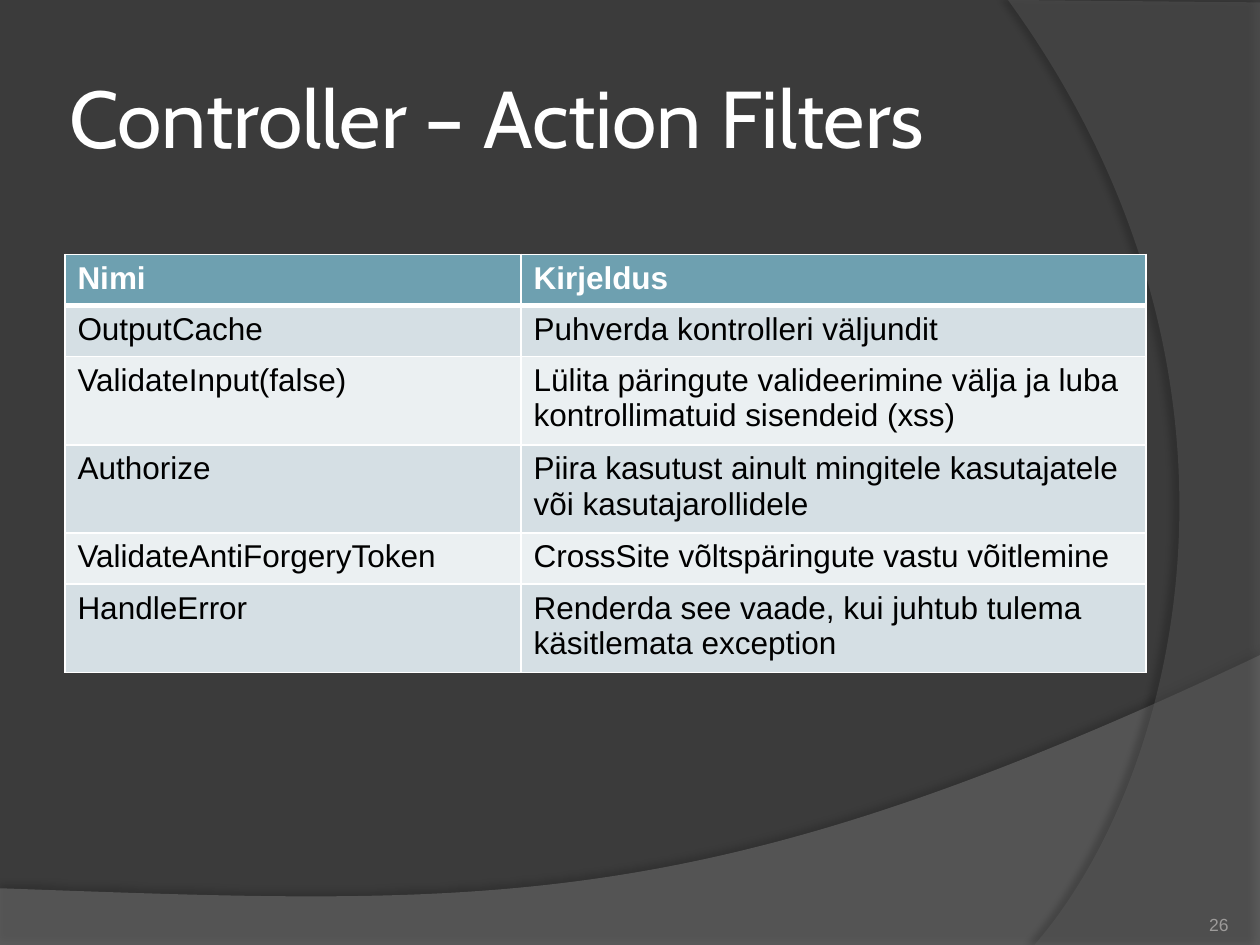
"""Build the slide that lists controller action filters in a table."""
from lxml import etree
from pptx import Presentation
from pptx.dml.color import RGBColor
from pptx.enum.text import MSO_ANCHOR, PP_ALIGN
from pptx.oxml import parse_xml
from pptx.oxml.ns import qn
from pptx.util import Pt

LEFT, RIGHT = PP_ALIGN.LEFT, PP_ALIGN.RIGHT
MIDDLE, BOTTOM = MSO_ANCHOR.MIDDLE, MSO_ANCHOR.BOTTOM
DRAWING = 'xmlns:a="http://schemas.openxmlformats.org/drawingml/2006/main"'

COLORS = {
    "background": "3B3B3B",
    "lower wave": "7F7F7F",
    "right arc": "5E5E5E",
    "shadow": "000000",
    "white": "FFFFFF",
    "header": "6EA0B0",
    "odd row": "D5DFE4",
    "even row": "EBF0F2",
    "cell text": "000000",
    "page number": "9D9B9A",
}


def write_text(frame, text, align, color, **font_values):
    """Put one formatted span into a text frame."""
    para = frame.paragraphs[0]
    para.alignment = align
    span = para.add_run()
    span.text = text
    span.font.color.rgb = RGBColor.from_string(COLORS[color])
    for name, value in font_values.items():
        setattr(span.font, name, value)


deck = Presentation()
deck.slide_width, deck.slide_height = Pt(720), Pt(540)
page = deck.slides.add_slide(deck.slide_layouts[5])
page.background.fill.solid()
page.background.fill.fore_color.rgb = RGBColor.from_string(COLORS["background"])

bands = [
    ("lower wave", [(0, 507.6), (0, 540), (720, 540), (720, 374.4)],
     [(402.5, 524.9), (281.5, 517.7), (0, 507.6)], 45, 35, 3.5, 270),
    ("right arc", [(720, 1.4), (720, 540), (591.1, 540)],
     [(673.2, 445.7), (733, 216), (576, 0)], 40, 45, 4, 180),
]
for name, corners, curve, opacity, shadow_opacity, distance, angle in bands:
    points = [(Pt(x), Pt(y)) for x, y in corners + curve[-1:]]
    builder = page.shapes.build_freeform(*points[0])
    builder.add_line_segments(points[1:], close=True)
    band = builder.convert_to_shape()
    last_line = list(band.element.iter(qn("a:lnTo")))[-1]
    bend = etree.Element(qn("a:cubicBezTo"))
    for x, y in curve:
        etree.SubElement(bend, qn("a:pt"), x=str(Pt(x) - band.left), y=str(Pt(y) - band.top))
    last_line.getparent().replace(last_line, bend)
    band.line.fill.background()
    band.fill.solid()
    band.fill.fore_color.rgb = RGBColor.from_string(COLORS[name])
    fill_color = band.element.spPr.find(qn("a:solidFill"))[0]
    etree.SubElement(fill_color, qn("a:alpha"), val=str(opacity * 1000))
    band.element.spPr.append(parse_xml(
        f'<a:effectLst {DRAWING}><a:outerShdw blurRad="{Pt(4)}" '
        f'dist="{Pt(distance)}" dir="{angle * 60000}" algn="ctr" rotWithShape="0">'
        f'<a:srgbClr val="{COLORS["shadow"]}"><a:alpha val="{shadow_opacity * 1000}"/>'
        '</a:srgbClr></a:outerShdw></a:effectLst>'
    ))

title = page.shapes.title
page.shapes.element.append(title.element)
for name, value in zip(("left", "top", "width", "height"), (36, 21.6, 588.2, 90)):
    setattr(title, name, Pt(value))
number_box = page.shapes.add_textbox(Pt(642.2), Pt(505.4), Pt(59.8), Pt(28.8))
for box, anchor, margin in [(title, MIDDLE, 3.6), (number_box, BOTTOM, 0)]:
    frame = box.text_frame
    frame.word_wrap = True
    frame.vertical_anchor = anchor
    for side in ("left", "top", "right", "bottom"):
        setattr(frame, f"margin_{side}", Pt(margin))
write_text(title.text_frame, "Controller – Action Filters", LEFT, "white",
           name="Cabin", size=Pt(46))
write_text(number_box.text_frame, "26", RIGHT, "page number", name="Arial", size=Pt(10))

one_line, two_lines = 29.2, 47.4
rows = [
    (one_line, "Nimi", "Kirjeldus"),
    (one_line, "OutputCache", "Puhverda kontrolleri väljundit"),
    (two_lines, "ValidateInput(false)",
     "Lülita päringute valideerimine välja ja luba kontrollimatuid sisendeid (xss)"),
    (two_lines, "Authorize",
     "Piira kasutust ainult mingitele kasutajatele või kasutajarollidele"),
    (one_line, "ValidateAntiForgeryToken", "CrossSite võltspäringute vastu võitlemine"),
    (two_lines, "HandleError",
     "Renderda see vaade, kui juhtub tulema käsitlemata exception"),
]
column_widths = (260.6, 357.1)
table = page.shapes.add_table(
    len(rows), len(column_widths), Pt(37.1), Pt(145.4),
    Pt(sum(column_widths)), Pt(sum(row[0] for row in rows)),
).table
for column, width in zip(table.columns, column_widths):
    column.width = Pt(width)
for row_index, (height, *texts) in enumerate(rows):
    table.rows[row_index].height = Pt(height)
    is_header = row_index == 0
    fill_name = "header" if is_header else "odd row" if row_index % 2 else "even row"
    borders = {"L": 1, "R": 1, "T": 3 if row_index == 1 else 1, "B": 3 if is_header else 1}
    for column_index, text in enumerate(texts):
        cell = table.cell(row_index, column_index)
        write_text(cell.text_frame, text, LEFT, "white" if is_header else "cell text",
                   name="Arial", size=Pt(18), bold=is_header)
        properties = cell._tc.get_or_add_tcPr()
        for side, width in borders.items():
            properties.append(parse_xml(
                f'<a:ln{side} {DRAWING} w="{Pt(width)}"><a:solidFill>'
                f'<a:srgbClr val="{COLORS["white"]}"/></a:solidFill></a:ln{side}>'
            ))
        cell.fill.solid()
        cell.fill.fore_color.rgb = RGBColor.from_string(COLORS[fill_name])

deck.save("out.pptx")
